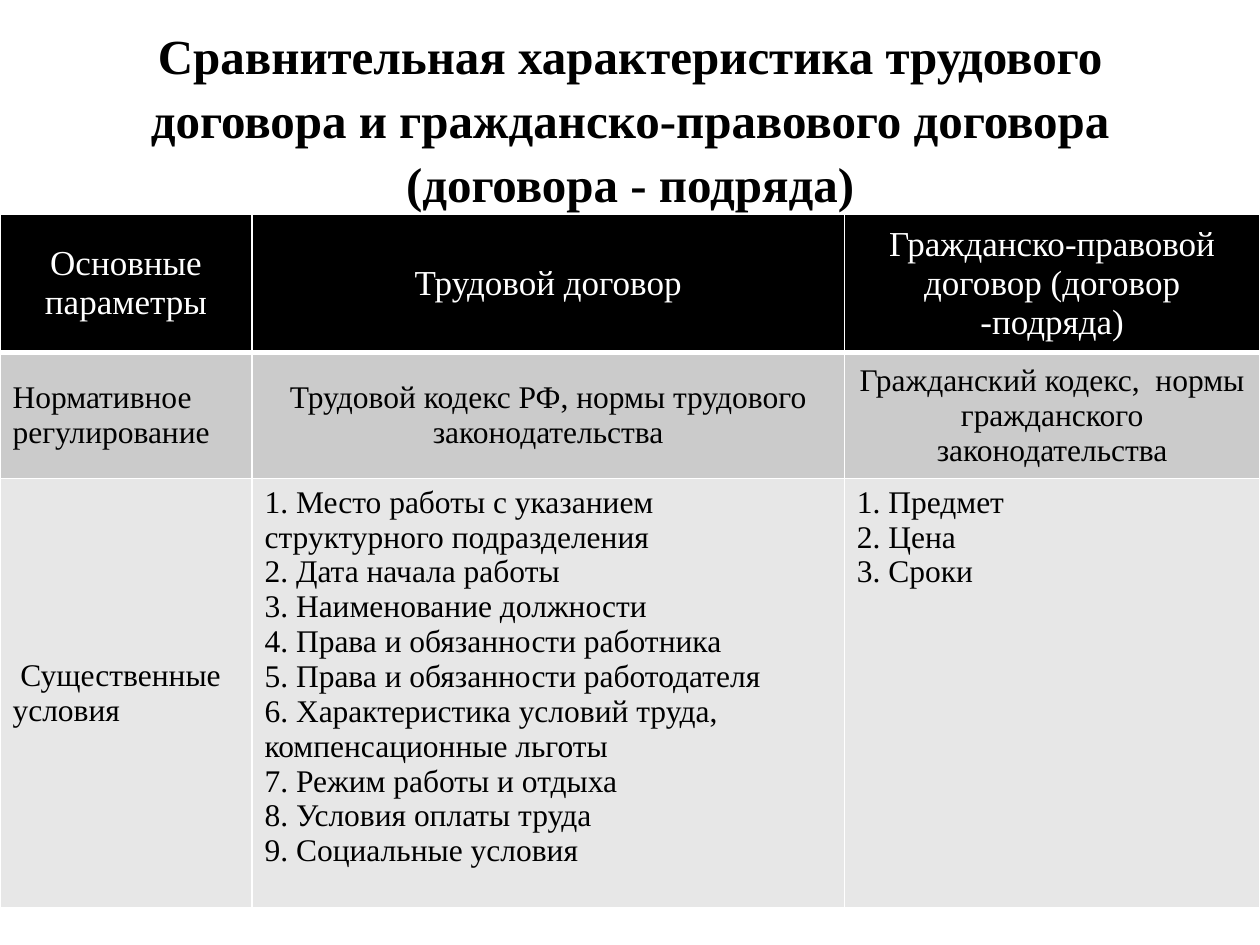
"""Build a slide comparing an employment contract with a civil-law contract."""
from dataclasses import dataclass

import lxml.etree
import pptx
import pptx.dml.color
import pptx.enum.text
import pptx.oxml.ns
import pptx.table
import pptx.text.text
import pptx.util

Cm = pptx.util.Cm
Pt = pptx.util.Pt
LEFT = pptx.enum.text.PP_ALIGN.LEFT
CENTER = pptx.enum.text.PP_ALIGN.CENTER
TOP = pptx.enum.text.MSO_ANCHOR.TOP
MIDDLE = pptx.enum.text.MSO_ANCHOR.MIDDLE

FONT = "Times New Roman"
BLACK, WHITE = "000000", "FFFFFF"
COLUMN_WIDTHS = (5.08, 11.94, 8.38)
THIN, THICK = 1, 3


@dataclass
class Entry:
    """Content of one table cell."""
    lines: list[str]
    align: int = CENTER
    anchor: int = MIDDLE
    hanging: float = 0


@dataclass
class Band:
    """One table row with its look."""
    height: float
    fill: str
    ink: str
    size: int
    entries: list[Entry]
    line_above: int = THIN
    line_below: int = THIN


BANDS = [
    Band(2.79, BLACK, WHITE, 20, [
        Entry(["Основные параметры"]),
        Entry(["Трудовой договор"]),
        Entry(["Гражданско-правовой договор (договор -подряда)"]),
    ], line_below=THICK),
    Band(2.54, "CBCBCB", BLACK, 18, [
        Entry(["Нормативное регулирование"], LEFT),
        Entry(["Трудовой кодекс РФ, нормы трудового законодательства"]),
        Entry(["Гражданский кодекс,  нормы гражданского законодательства"]),
    ], line_above=THICK),
    Band(8.64, "E7E7E7", BLACK, 18, [
        Entry([" Существенные условия"], LEFT),
        Entry([
            "1. Место работы с указанием структурного подразделения",
            "2. Дата начала работы",
            "3. Наименование должности",
            "4. Права и обязанности работника",
            "5. Права и обязанности работодателя",
            "6. Характеристика условий труда, компенсационные льготы",
            "7. Режим работы и отдыха",
            "8. Условия оплаты труда",
            "9. Социальные условия",
        ], LEFT, TOP),
        Entry(["1. Предмет", "2. Цена", "3. Сроки"], LEFT, TOP, hanging=0.95),
    ]),
]


def rgb(code: str) -> pptx.dml.color.RGBColor:
    """Turn a hex string into a colour."""
    return pptx.dml.color.RGBColor.from_string(code)


def add_run(paragraph: pptx.text.text._Paragraph, wording: str, size: int,
            ink: str, bold: bool = False) -> None:
    """Append a formatted run to a paragraph."""
    run = paragraph.add_run()
    run.text = wording
    run.font.name = FONT
    run.font.size = Pt(size)
    run.font.bold = bold
    run.font.color.rgb = rgb(ink)


def set_borders(cell: pptx.table._Cell, above: int, below: int) -> None:
    """Draw white lines on all four sides of a cell."""
    qn = pptx.oxml.ns.qn
    properties = cell._tc.get_or_add_tcPr()
    sides = (("a:lnL", THIN), ("a:lnR", THIN), ("a:lnT", above), ("a:lnB", below))
    for position, (side, width) in enumerate(sides):
        line = lxml.etree.Element(qn(side), w=str(Pt(width)))
        fill = lxml.etree.SubElement(line, qn("a:solidFill"))
        lxml.etree.SubElement(fill, qn("a:srgbClr"), val=WHITE)
        properties.insert(position, line)


def fill_cell(cell: pptx.table._Cell, entry: Entry, band: Band) -> None:
    """Write and format one table cell."""
    cell.fill.solid()
    cell.fill.fore_color.rgb = rgb(band.fill)
    cell.vertical_anchor = entry.anchor
    set_borders(cell, band.line_above, band.line_below)
    frame = cell.text_frame
    for index, wording in enumerate(entry.lines):
        paragraph = frame.add_paragraph() if index else frame.paragraphs[0]
        paragraph.alignment = entry.align
        if entry.hanging:
            properties = paragraph._p.get_or_add_pPr()
            properties.set("marL", str(Cm(entry.hanging)))
            properties.set("indent", str(-Cm(entry.hanging)))
        add_run(paragraph, wording, band.size, band.ink)


def main() -> None:
    """Create and save the presentation."""
    deck = pptx.Presentation()
    deck.slide_width, deck.slide_height = Cm(25.4), Cm(19.05)
    slide = deck.slides.add_slide(deck.slide_layouts[5])

    heading = slide.shapes.title
    heading.left, heading.top = Cm(1.27), Cm(0.76)
    heading.width, heading.height = Cm(22.86), Cm(3.18)
    heading.text_frame.auto_size = pptx.enum.text.MSO_AUTO_SIZE.NONE
    heading.text_frame.vertical_anchor = MIDDLE
    paragraph = heading.text_frame.paragraphs[0]
    paragraph.alignment = CENTER
    paragraph.line_spacing = 1.09
    add_run(paragraph, "Сравнительная характеристика трудового договора и "
            "гражданско-правового договора (договора - подряда)", 28, BLACK, True)

    comparison = slide.shapes.add_table(
        len(BANDS), len(COLUMN_WIDTHS), Cm(0), Cm(4.32),
        Cm(sum(COLUMN_WIDTHS)), Cm(sum(band.height for band in BANDS))).table
    comparison.first_row = comparison.horz_banding = False
    for column, width in zip(comparison.columns, COLUMN_WIDTHS):
        column.width = Cm(width)
    for row, band in zip(comparison.rows, BANDS):
        row.height = Cm(band.height)
        for cell, entry in zip(row.cells, band.entries):
            fill_cell(cell, entry, band)

    deck.save("out.pptx")


if __name__ == "__main__":
    main()
